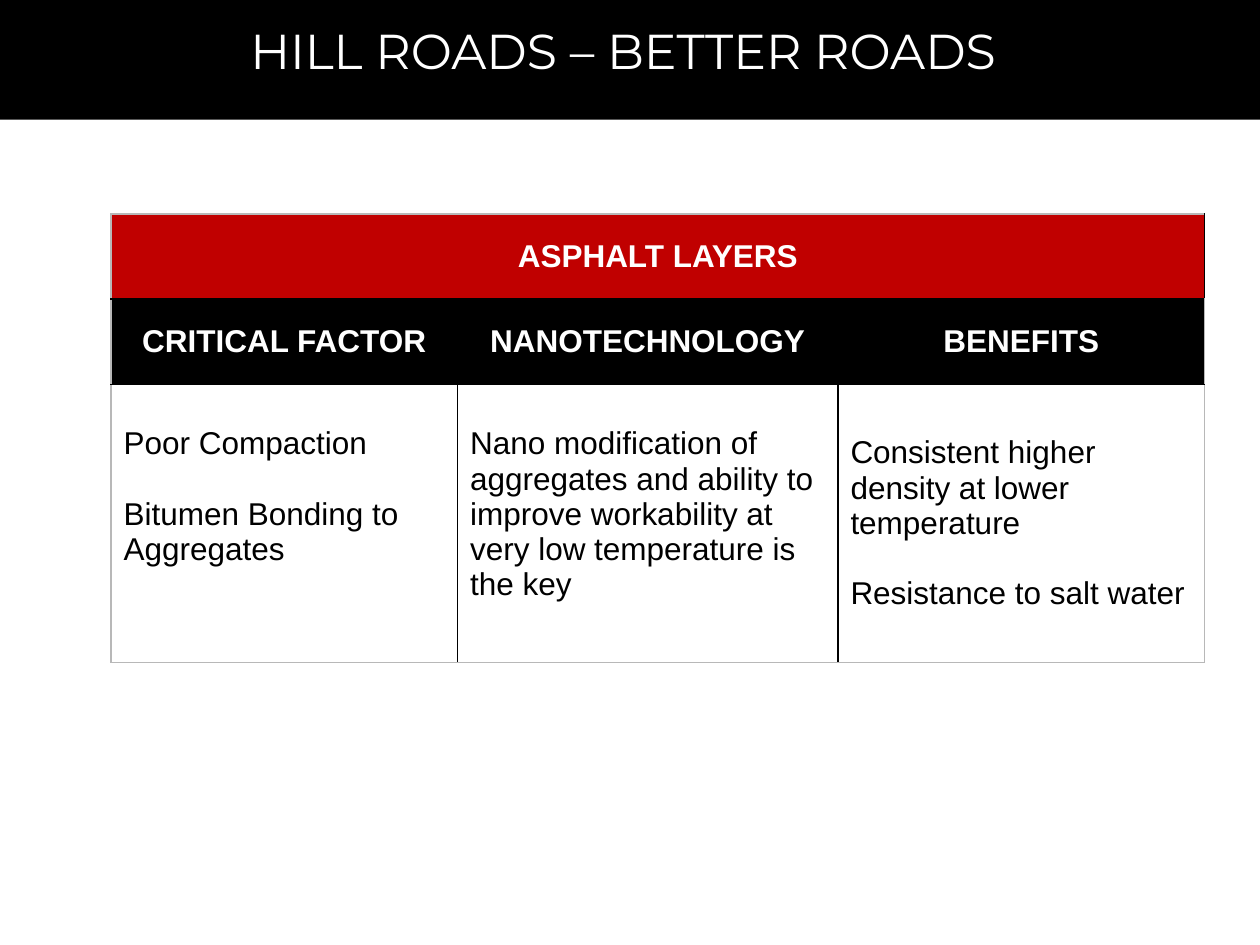
"""Build the hill roads slide with its asphalt layers table."""
from lxml.etree import SubElement
from pptx import Presentation
from pptx.dml.color import RGBColor
from pptx.enum.shapes import MSO_SHAPE as Shape
from pptx.enum.text import MSO_ANCHOR as Anchor, PP_ALIGN as Align
from pptx.oxml.ns import qn
from pptx.util import Pt

BLACK = RGBColor(0x00, 0x00, 0x00)
WHITE = RGBColor(0xFF, 0xFF, 0xFF)
RED = RGBColor(0xC0, 0x00, 0x00)
GREY = RGBColor(0xB8, 0xB8, 0xB8)

HEADER = {"name": "Arial", "size": Pt(18), "bold": True}
BODY = {"name": "Arial", "size": Pt(18), "bold": False}
TITLE = {"name": "Montserrat", "size": Pt(28)}


def write(frame, lines, color, align, formats):
    frame.text = "\n".join(lines)
    for index, paragraph in enumerate(frame.paragraphs):
        paragraph.alignment = align
        if index:
            paragraph.space_before = Pt(20)
        for name, value in formats.items():
            setattr(paragraph.font, name, value)
        paragraph.font.color.rgb = color


def add_border(cell, side, color):
    properties = cell._tc.get_or_add_tcPr()
    line = SubElement(properties, qn(f"a:ln{side}"), w=str(Pt(1)))
    fill = SubElement(line, qn("a:solidFill"))
    SubElement(fill, qn("a:srgbClr"), val=str(color))


presentation = Presentation()
presentation.slide_width, presentation.slide_height = Pt(720), Pt(540)
slide = presentation.slides.add_slide(presentation.slide_layouts[6])

banner = slide.shapes.add_shape(Shape.RECTANGLE, 0, 0, Pt(720), Pt(68.4))
banner.shadow.inherit = False
banner.fill.solid()
banner.fill.fore_color.rgb = BLACK
banner.line.fill.background()

title = slide.shapes.add_textbox(Pt(31), Pt(7.9), Pt(657.4), Pt(41))
title.text_frame.word_wrap = True
write(title.text_frame, ["HILL ROADS – BETTER ROADS "], WHITE, Align.CENTER, TITLE)

rows = [
    [["ASPHALT LAYERS"], [], []],
    [["CRITICAL FACTOR"], ["NANOTECHNOLOGY"], ["BENEFITS"]],
    [
        ["Poor Compaction", "Bitumen Bonding to Aggregates"],
        ["Nano modification of aggregates and ability to improve workability "
         "at very low temperature is the key"],
        ["Consistent higher density at lower temperature",
         "Resistance to salt water"],
    ],
]
widths = [198, 217.4, 209.6]
heights = [48.6, 48.6, 159]
fills = [RED, BLACK, None]

table = slide.shapes.add_table(
    3, 3, Pt(63.4), Pt(122.4), Pt(sum(widths)), Pt(sum(heights))).table
table.first_row = table.horz_banding = False
for column, width in zip(table.columns, widths):
    column.width = Pt(width)
for row, height in zip(table.rows, heights):
    row.height = Pt(height)
table.cell(0, 0).merge(table.cell(0, 2))

for r, row in enumerate(rows):
    for c, lines in enumerate(row):
        cell = table.cell(r, c)
        outer = {"L": c == 0, "R": c == 2, "T": r == 0, "B": r == 2}
        for side, is_outer in outer.items():
            add_border(cell, side, GREY if is_outer else BLACK)
        if fills[r] is None:
            cell.fill.background()
        else:
            cell.fill.solid()
            cell.fill.fore_color.rgb = fills[r]
        if r < 2:
            cell.vertical_anchor = Anchor.MIDDLE
            if lines:
                write(cell.text_frame, lines, WHITE, Align.CENTER, HEADER)
        else:
            if c == 2:
                cell.vertical_anchor = Anchor.MIDDLE
            else:
                cell.margin_top = Pt(24)
            write(cell.text_frame, lines, BLACK, Align.LEFT, BODY)

presentation.save("out.pptx")
